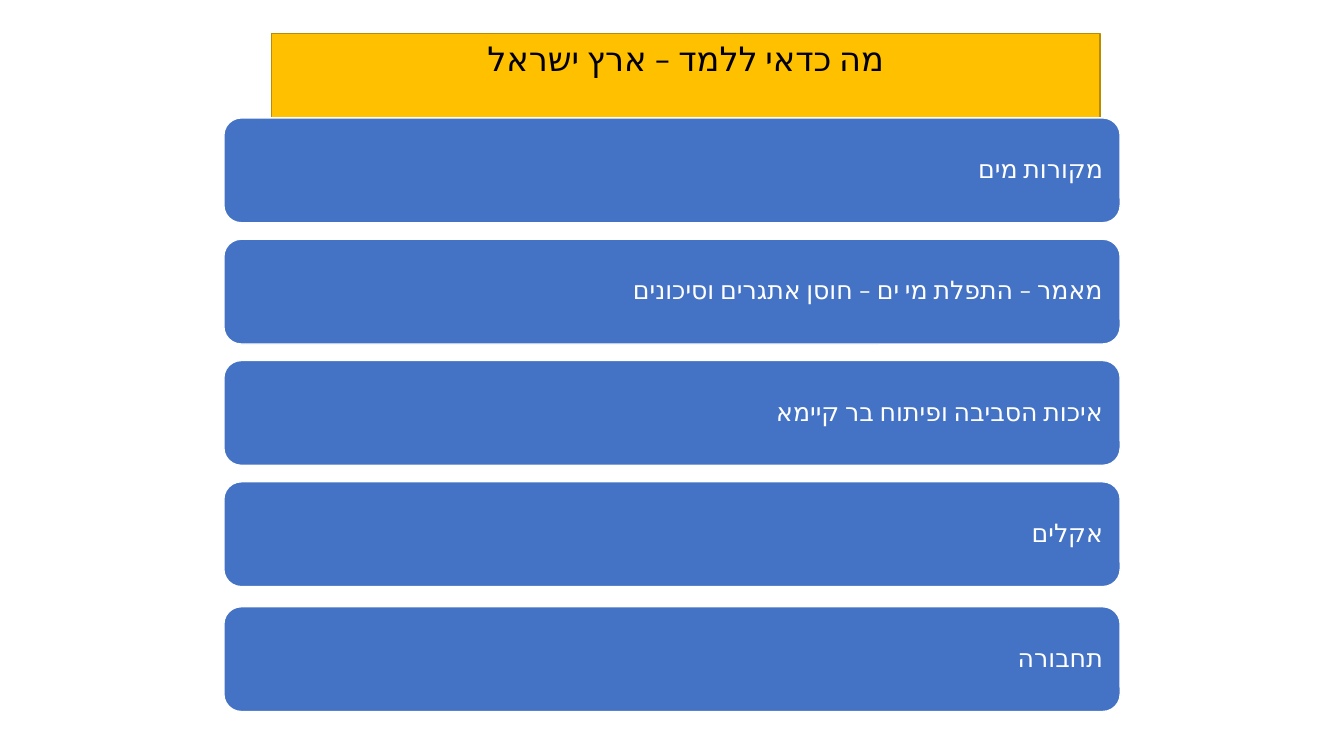
import dataclasses

import pptx
import pptx.dml.color
import pptx.enum.shapes
import pptx.enum.text
import pptx.util

Inches = pptx.util.Inches
Align = pptx.enum.text.PP_ALIGN
Anchor = pptx.enum.text.MSO_ANCHOR
Fit = pptx.enum.text.MSO_AUTO_SIZE

COLORS = {"gold": "FFC000", "bronze": "BA8C00", "blue": "4472C4",
          "white": "FFFFFF", "black": "000000"}
FONT = "Calibri"

# Grid of bars, in inches
LEFT, TOP = 2.22, 1.17
WIDTH, HEIGHT = 8.89, 1.04
PITCH = 3.61 / 3


@dataclasses.dataclass(frozen=True)
class Style:
    fill: str
    line: str
    ink: str
    size: int
    align: Align
    space: float
    frame: dict


@dataclasses.dataclass(frozen=True)
class Topic:
    text: str
    row: float


TITLE = Style("gold", "bronze", "black", 24, Align.CENTER, 1.0, {
    "vertical_anchor": Anchor.TOP, "auto_size": Fit.SHAPE_TO_FIT_TEXT,
    "margin_left": Inches(0.1), "margin_right": Inches(0.1),
    "margin_top": Inches(0.05), "margin_bottom": Inches(0.05)})
BAR = Style("blue", "white", "white", 18, Align.RIGHT, 0.9, {
    "vertical_anchor": Anchor.MIDDLE, "auto_size": Fit.NONE,
    "margin_left": Inches(0.12), "margin_right": Inches(0.12),
    "margin_top": Inches(0.12), "margin_bottom": Inches(0.12)})

# The last bar sits slightly below the regular step
TOPICS = [
    Topic("מקורות מים", 0),
    Topic("מאמר – התפלת מי ים – חוסן אתגרים וסיכונים", 1),
    Topic("איכות הסביבה ופיתוח בר קיימא", 2),
    Topic("אקלים", 3),
    Topic("תחבורה", 4.03),
]


def color(name: str) -> pptx.dml.color.RGBColor:
    return pptx.dml.color.RGBColor.from_string(COLORS[name])


def dress(shape, text: str, style: Style) -> None:
    """Fill and outline a shape and set its right-to-left text."""
    shape.fill.solid()
    shape.fill.fore_color.rgb = color(style.fill)
    shape.line.color.rgb = color(style.line)
    shape.line.width = pptx.util.Pt(1)

    frame = shape.text_frame
    frame.word_wrap = True
    for name, value in style.frame.items():
        setattr(frame, name, value)

    para = frame.paragraphs[0]
    para.alignment = style.align
    para.line_spacing = style.space
    para._p.get_or_add_pPr().set("rtl", "1")
    run = para.add_run()
    run.text = text
    look = {"name": FONT, "size": pptx.util.Pt(style.size)}
    for name, value in look.items():
        setattr(run.font, name, value)
    run.font.color.rgb = color(style.ink)
    props = run._r.get_or_add_rPr()
    props.set("lang", "he-IL")
    script = props.makeelement(pptx.oxml.ns.qn("a:cs"), {"typeface": FONT})
    props.append(script)


def add_title(slide) -> None:
    title = slide.shapes.title
    spot = {"left": 2.69, "top": 0.33, "width": 8.22, "height": 0.5}
    for name, value in spot.items():
        setattr(title, name, Inches(value))
    dress(title, "מה כדאי ללמד – ארץ ישראל", TITLE)


def add_bar(slide, topic: Topic) -> None:
    bar = slide.shapes.add_shape(
        pptx.enum.shapes.MSO_SHAPE.ROUNDED_RECTANGLE,
        Inches(LEFT), Inches(TOP + topic.row * PITCH),
        Inches(WIDTH), Inches(HEIGHT))
    bar.shadow.inherit = False
    dress(bar, topic.text, BAR)


def main() -> None:
    deck = pptx.Presentation()
    deck.slide_width = Inches(13.33)
    deck.slide_height = Inches(7.5)
    slide = deck.slides.add_slide(deck.slide_layouts.get_by_name("Title Only"))
    add_title(slide)
    for topic in TOPICS:
        add_bar(slide, topic)
    deck.save("out.pptx")


if __name__ == "__main__":
    main()
